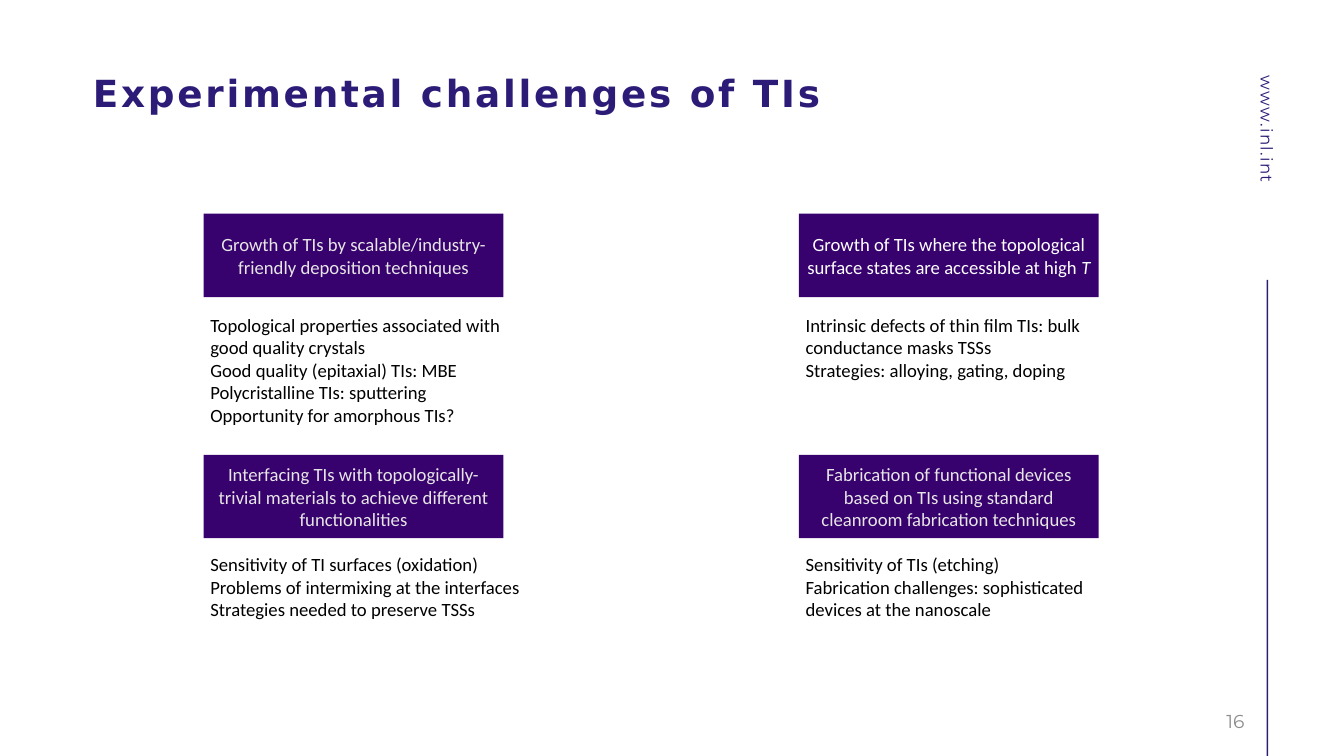
import pptx
import pptx.dml.color
import pptx.enum.shapes
import pptx.enum.text
import pptx.util

Pt = pptx.util.Pt
ALIGN = pptx.enum.text.PP_ALIGN
ANCHOR = pptx.enum.text.MSO_ANCHOR
RECTANGLE = pptx.enum.shapes.MSO_SHAPE.RECTANGLE

COLOURS = {
    "navy": "2D1C77",
    "purple": "38026E",
    "pale": "E7E6E6",
    "white": "FFFFFF",
    "black": "000000",
    "grey": "8C8C8C",
}


def colour(name):
    return pptx.dml.color.RGBColor.from_string(COLOURS[name])


def write(box, paragraphs, font, ink, spacing=0, margins=True, frame=None, layout=None):
    """Fill a box; each paragraph is a list of (text, italic) spans."""
    text_frame = box.text_frame
    frame_format = {"word_wrap": True, **(frame or {})}
    if not margins:
        for side in ("left", "top", "right", "bottom"):
            frame_format[f"margin_{side}"] = 0
    for name, value in frame_format.items():
        setattr(text_frame, name, value)
    for index, spans in enumerate(paragraphs):
        para = text_frame.paragraphs[0] if index == 0 else text_frame.add_paragraph()
        for name, value in (layout or {}).items():
            setattr(para, name, value)
        for text, italic in spans:
            span = para.add_run()
            span.text = text
            for name, value in font.items():
                setattr(span.font, name, value)
            if italic:
                span.font.italic = True
            span.font.color.rgb = colour(ink)
            if spacing:
                span._r.get_or_add_rPr().set("spc", str(spacing))


deck = pptx.Presentation()
deck.slide_width, deck.slide_height = Pt(1440), Pt(810)
page = deck.slides.add_slide(deck.slide_layouts[6])

# Vertical rule and web address at the right edge
rule = page.shapes.add_shape(RECTANGLE, Pt(1357.2), Pt(300), Pt(1.5), Pt(510))
rule.shadow.inherit = False
rule.fill.solid()
rule.fill.fore_color.rgb = colour("navy")
rule.line.fill.background()

address = page.shapes.add_textbox(Pt(1270.8), Pt(158.4), Pt(178.6), Pt(24.5))
address.rotation = 90
write(address, [[("www.inl.int", False)]], {"name": "Montserrat", "size": Pt(18)}, "navy",
      spacing=140, margins=False, layout={"line_spacing": Pt(25.2)})

# Title
title = page.shapes.add_textbox(Pt(99.4), Pt(80.6), Pt(1242), Pt(65.5))
write(title, [[("Experimental challenges of TIs", False)]],
      {"name": "DejaVu Sans", "size": Pt(40), "bold": True}, "navy",
      spacing=300, margins=False, layout={"line_spacing": 0.9})

# Page number
number = page.shapes.add_textbox(Pt(1016.6), Pt(751), Pt(324), Pt(43.2))
write(number, [[("16", False)]], {"name": "Montserrat", "size": Pt(20)}, "grey",
      frame={"vertical_anchor": ANCHOR.MIDDLE}, layout={"alignment": ALIGN.RIGHT})

# Two by two challenges: heading spans, heading colour, notes below
challenges = [
    ([("Growth of TIs by scalable/industry-friendly deposition techniques", False)], "pale",
     ["Topological properties associated with good quality crystals",
      "Good quality (epitaxial) TIs: MBE",
      "Polycristalline TIs: sputtering",
      "Opportunity for amorphous TIs?"]),
    ([("Growth of TIs where the topological surface states are accessible at high ", False),
      ("T", True)], "white",
     ["Intrinsic defects of thin film TIs: bulk conductance masks TSSs",
      "Strategies: alloying, gating, doping"]),
    ([("Interfacing TIs with topologically-trivial materials to achieve different functionalities",
       False)], "pale",
     ["Sensitivity of TI surfaces (oxidation)",
      "Problems of intermixing at the interfaces",
      "Strategies needed to preserve TSSs"]),
    ([("Fabrication of functional devices based on TIs using standard cleanroom fabrication "
       "techniques", False)], "pale",
     ["Sensitivity of TIs (etching)",
      "Fabrication challenges: sophisticated devices at the nanoscale"]),
]
lefts = [218.2, 856.1]
rows = [  # heading top, notes top, notes width
    (229, 332.6, 341.3),
    (487.4, 589, 360.7),
]
body_font = {"name": "Calibri", "size": Pt(20)}

for index, (heading, ink, notes) in enumerate(challenges):
    left = lefts[index % 2]
    heading_top, notes_top, notes_width = rows[index // 2]

    banner = page.shapes.add_shape(RECTANGLE, Pt(left), Pt(heading_top), Pt(321.1), Pt(89.3))
    banner.shadow.inherit = False
    banner.fill.solid()
    banner.fill.fore_color.rgb = colour("purple")
    banner.line.fill.background()
    write(banner, [heading], body_font, ink,
          frame={"vertical_anchor": ANCHOR.MIDDLE}, layout={"alignment": ALIGN.CENTER})

    notes_height = 128.2 if len(notes) > 3 else 79.9
    box = page.shapes.add_textbox(Pt(left), Pt(notes_top), Pt(notes_width), Pt(notes_height))
    write(box, [[(note, False)] for note in notes], body_font, "black")

deck.save("out.pptx")
